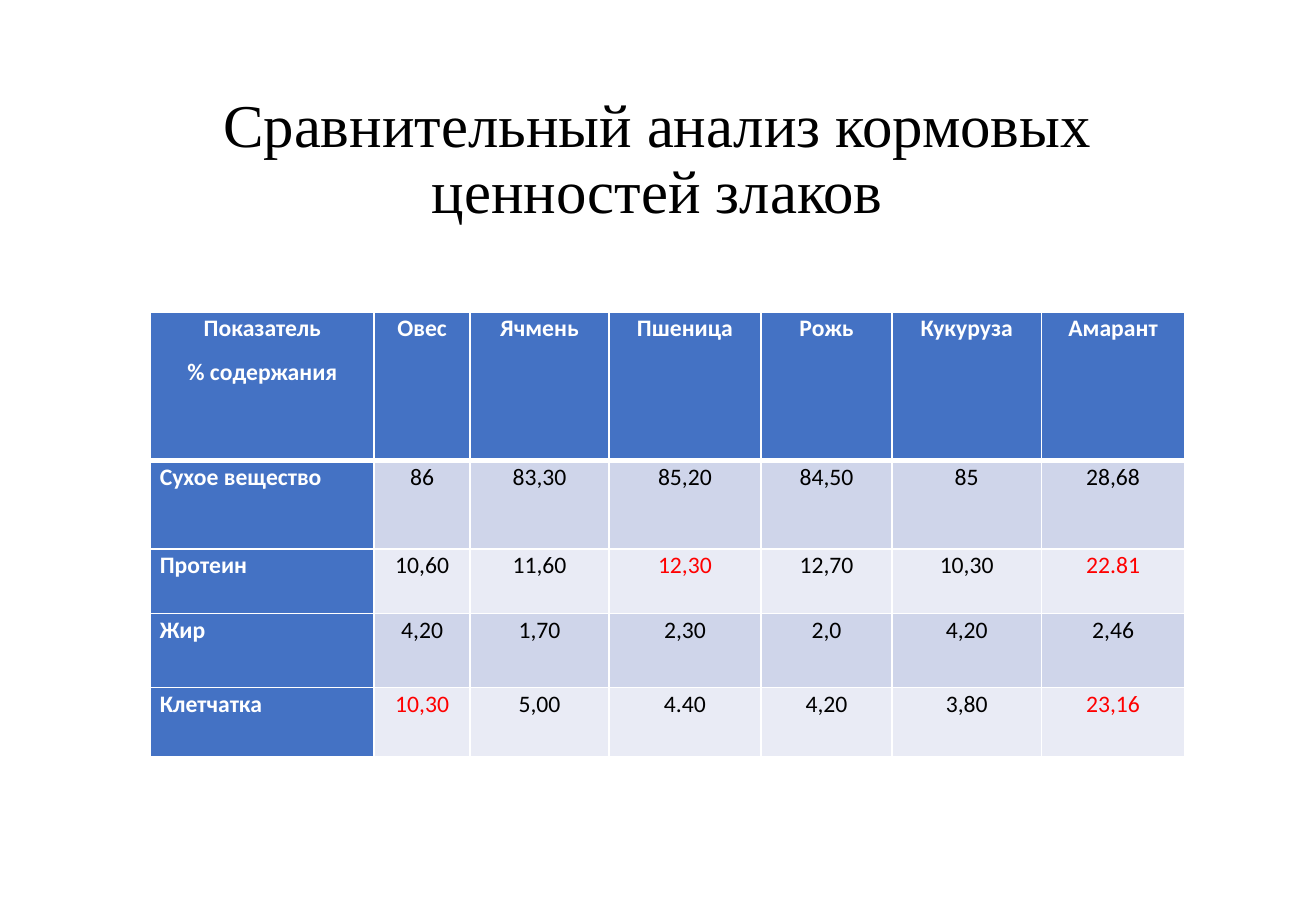
from lxml import etree
from pptx import Presentation
from pptx.dml.color import RGBColor
from pptx.enum.text import MSO_ANCHOR, PP_ALIGN
from pptx.oxml.ns import qn
from pptx.util import Cm, Pt

LEFT, CENTER = PP_ALIGN.LEFT, PP_ALIGN.CENTER
MIDDLE = MSO_ANCHOR.MIDDLE
WHITE = RGBColor(0xFF, 0xFF, 0xFF)
BLACK = RGBColor(0x00, 0x00, 0x00)
RED = RGBColor(0xFF, 0x00, 0x00)
BLUE = RGBColor(0x44, 0x72, 0xC4)
BANDS = (RGBColor(0xCF, 0xD5, 0xEA), RGBColor(0xE9, 0xEB, 0xF5))

TITLE = "Сравнительный анализ кормовых ценностей злаков"
FEED_VALUES = [
    ["Показатель\n% содержания", "Овес", "Ячмень", "Пшеница", "Рожь", "Кукуруза", "Амарант"],
    ["Сухое вещество", "86", "83,30", "85,20", "84,50", "85", "28,68"],
    ["Протеин", "10,60", "11,60", "12,30", "12,70", "10,30", "22.81"],
    ["Жир", "4,20", "1,70", "2,30", "2,0", "4,20", "2,46"],
    ["Клетчатка", "10,30", "5,00", "4.40", "4,20", "3,80", "23,16"],
]
HIGHLIGHTS = {(2, 3), (2, 6), (4, 1), (4, 6)}
COLUMN_WIDTHS = [4.67, 2.01, 2.9, 3.18, 2.74, 3.12, 3]
ROW_HEIGHTS = [3.1, 1.85, 1.35, 1.55, 1.45]


class SlideBuilder:
    title_font = "Times New Roman"
    table_font = "Calibri"

    def __init__(self, slide):
        self.slide = slide

    def style(self, paragraph, font_name, size, color, bold, alignment, line_spacing):
        paragraph.alignment = alignment
        paragraph.line_spacing = line_spacing
        font = paragraph.font
        font.name, font.size, font.bold = font_name, Pt(size), bold
        font.color.rgb = color

    def title(self, text, left, top, width, height):
        box = self.slide.shapes.add_textbox(Cm(left), Cm(top), Cm(width), Cm(height))
        frame = box.text_frame
        frame.word_wrap = True
        frame.vertical_anchor = MIDDLE
        frame.text = text
        self.style(frame.paragraphs[0], self.title_font, 36, BLACK, False, CENTER, 0.9)

    def borders(self, cell, row):
        widths = {"L": 1, "R": 1, "T": 3 if row == 1 else 1, "B": 3 if row == 0 else 1}
        properties = cell._tc.get_or_add_tcPr()
        for side, width in widths.items():
            line = etree.SubElement(properties, qn(f"a:ln{side}"), w=str(Pt(width)))
            fill = etree.SubElement(line, qn("a:solidFill"))
            etree.SubElement(fill, qn("a:srgbClr"), val=str(WHITE))

    def cell(self, cell, text, row, column):
        heading = row == 0 or column == 0
        color = WHITE if heading else RED if (row, column) in HIGHLIGHTS else BLACK
        alignment = LEFT if column == 0 and row > 0 else CENTER
        cell.margin_left = cell.margin_right = Cm(0.19)
        cell.margin_top = cell.margin_bottom = 0
        self.borders(cell, row)
        cell.fill.solid()
        cell.fill.fore_color.rgb = BLUE if heading else BANDS[(row - 1) % 2]
        cell.text = text
        for paragraph in cell.text_frame.paragraphs:
            self.style(paragraph, self.table_font, 14, color, heading, alignment, 1.07)
            paragraph.space_after = Pt(8)

    def table(self, rows, left, top, widths, heights):
        table = self.slide.shapes.add_table(
            len(rows), len(widths), Cm(left), Cm(top), Cm(sum(widths)), Cm(sum(heights))
        ).table
        table.first_col = True
        for column, width in zip(table.columns, widths):
            column.width = Cm(width)
        for row, height in zip(table.rows, heights):
            row.height = Cm(height)
        for row, values in enumerate(rows):
            for column, text in enumerate(values):
                self.cell(table.cell(row, column), text, row, column)


def main():
    presentation = Presentation()
    presentation.slide_width, presentation.slide_height = Cm(27.51), Cm(19.05)
    slide = presentation.slides.add_slide(presentation.slide_layouts[6])
    builder = SlideBuilder(slide)
    builder.title(TITLE, 1.88, 1.52, 23.72, 3.68)
    builder.table(FEED_VALUES, 3.15, 6.53, COLUMN_WIDTHS, ROW_HEIGHTS)
    presentation.save("out.pptx")


if __name__ == "__main__":
    main()
